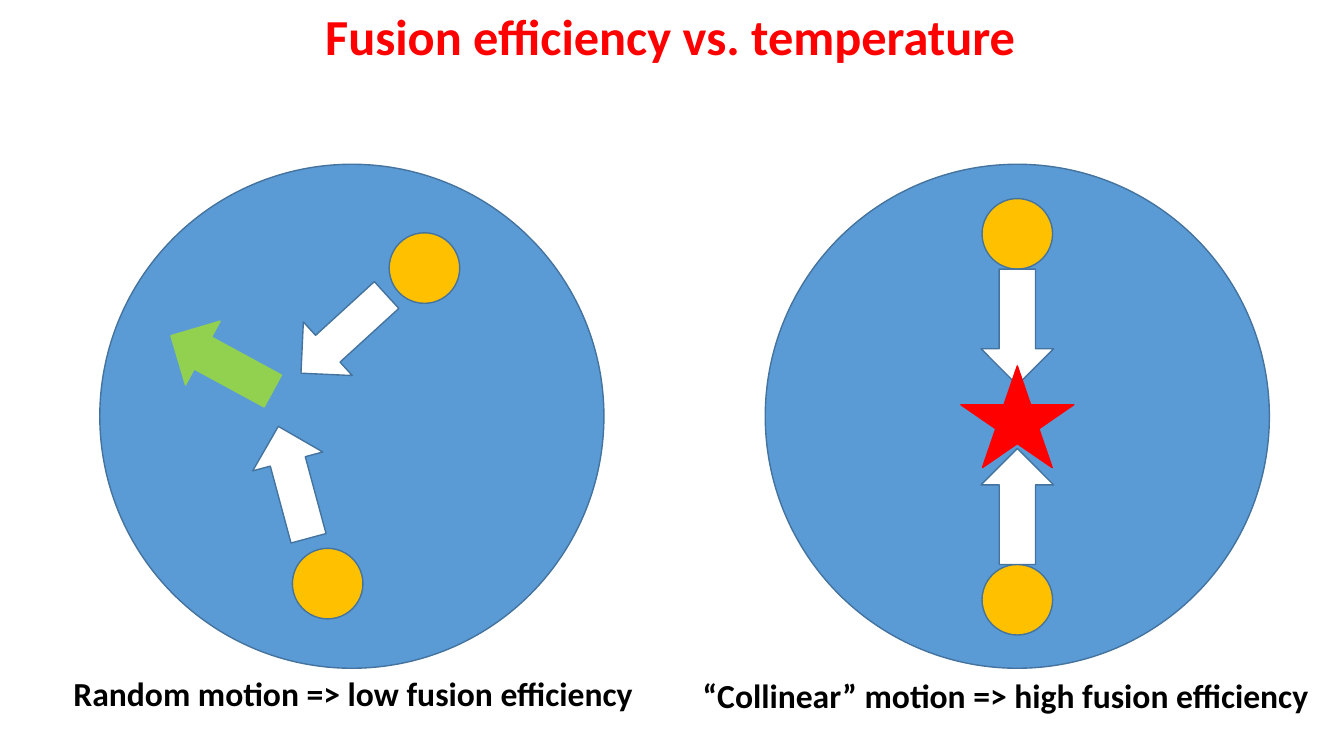
"""Build a slide comparing fusion efficiency of random and collinear motion."""
from pptx import Presentation
from pptx.dml.color import RGBColor
from pptx.enum.shapes import MSO_SHAPE
from pptx.enum.text import MSO_ANCHOR, MSO_AUTO_SIZE, PP_ALIGN
from pptx.util import Inches, Pt

COLORS = {
    "plasma": "5B9BD5", "outline": "43739E", "nucleus": "FFC000",
    "motion": "FFFFFF", "deflected": "92D050", "fusion": "FF0000",
    "title": "FF0000", "caption": "000000",
}
KINDS = {
    "plasma": (MSO_SHAPE.OVAL, 5, 5, "outline"),
    "nucleus": (MSO_SHAPE.OVAL, 0.7, 0.7, "outline"),
    "motion": (MSO_SHAPE.DOWN_ARROW, 0.72, 1.15, "outline"),
    "deflected": (MSO_SHAPE.DOWN_ARROW, 0.72, 1.15, "deflected"),
    "fusion": (MSO_SHAPE.STAR_5_POINT, 1.12, 1.01, "fusion"),
}
TITLE = ("Fusion efficiency vs. temperature", (1.34, 0, 10.62, 0.71))
SCENES = [
    {
        "parts": [
            ("plasma", 0.99, 1.63, 0),
            ("nucleus", 2.9, 5.44, 0),
            ("nucleus", 3.86, 2.31, 0),
            ("motion", 3.05, 2.74, 47.6),
            ("motion", 2.55, 4.21, 164.9),
            ("deflected", 1.84, 3.03, 118.5),
        ],
        "caption": ("Random motion => low fusion efficiency", (0.63, 6.63, 6.01, 0.5)),
    },
    {
        "parts": [
            ("plasma", 7.59, 1.63, 0),
            ("nucleus", 9.74, 1.97, 0),
            ("nucleus", 9.74, 5.6, 0),
            ("motion", 9.73, 2.67, 0),
            ("motion", 9.73, 4.45, 180),
            ("fusion", 9.53, 3.63, 0),
        ],
        "caption": ("“Collinear” motion => high fusion efficiency", (6.87, 6.65, 6.29, 0.5)),
    },
]


def color(name):
    return RGBColor.from_string(COLORS[name])


def write(box, text, size, color_name, align):
    frame = box.text_frame
    frame.word_wrap = True
    frame.auto_size = MSO_AUTO_SIZE.NONE
    para = frame.paragraphs[0]
    para.alignment = align
    span = para.add_run()
    span.text = text
    span.font.name = "Calibri"
    span.font.size = Pt(size)
    span.font.bold = True
    span.font.color.rgb = color(color_name)


def add_part(group, kind, left, top, rotation):
    preset, width, height, line = KINDS[kind]
    shape = group.shapes.add_shape(preset, *map(Inches, (left, top, width, height)))
    shape.rotation = rotation
    shape.shadow.inherit = False
    shape.fill.solid()
    shape.fill.fore_color.rgb = color(kind)
    shape.line.color.rgb = color(line)
    shape.line.width = Pt(1)


def main():
    deck = Presentation()
    deck.slide_width, deck.slide_height = Inches(13.33), Inches(7.5)
    page = deck.slides.add_slide(deck.slide_layouts[5])

    text, place = TITLE
    title = page.shapes.title
    title.left, title.top, title.width, title.height = map(Inches, place)
    title.text_frame.vertical_anchor = MSO_ANCHOR.MIDDLE
    write(title, text, 36, "title", PP_ALIGN.CENTER)

    for scene in SCENES:
        group = page.shapes.add_group_shape()
        for part in scene["parts"]:
            add_part(group, *part)
        text, place = scene["caption"]
        caption = page.shapes.add_textbox(*map(Inches, place))
        write(caption, text, 24, "caption", PP_ALIGN.LEFT)

    deck.save("out.pptx")


if __name__ == "__main__":
    main()
